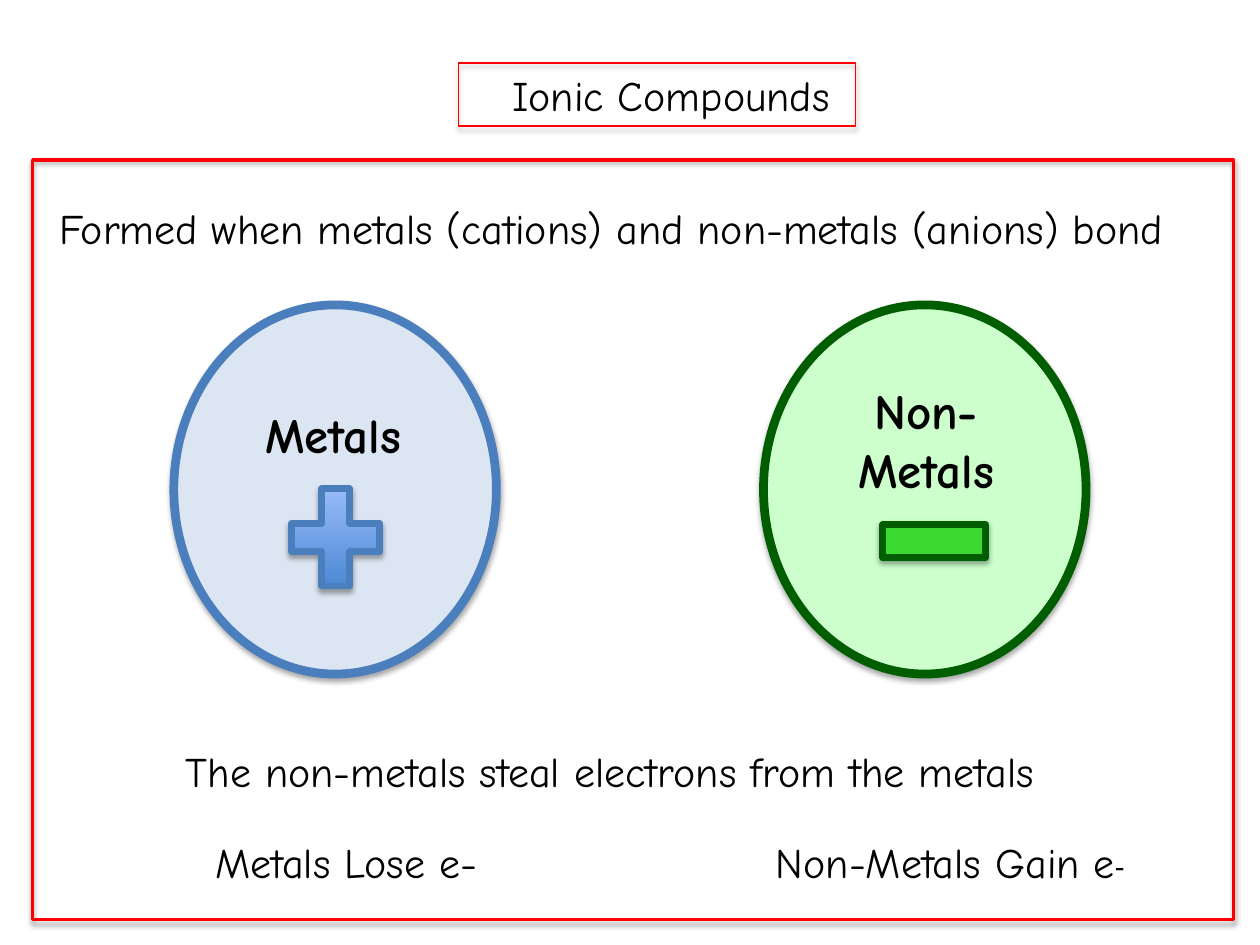
from lxml.etree import SubElement
from pptx import Presentation
from pptx.dml.color import RGBColor
from pptx.enum.shapes import MSO_SHAPE
from pptx.enum.text import MSO_ANCHOR, MSO_AUTO_SIZE, PP_ALIGN
from pptx.oxml.ns import qn
from pptx.util import Inches, Pt

FONT = "Comic Neue"
COLORS = {
    "text": "000000", "frame": "FF0000", "shadow": "000000",
    "metal": "DCE6F2", "metal_line": "4B7EBC",
    "plus_bottom": "3F80CE", "plus_top": "A4C4FF",
    "nonmetal": "CCFFCC", "nonmetal_line": "005D00", "minus": "3AD831",
}

# Content: boxes are left, top, width, height in inches
TITLE = ("Ionic Compounds", (2.99, 0.5, 4.67, 0.5))
FRAMES = [((3.64, 0.5, 3.15, 0.5), 0.75), ((0.26, 1.27, 9.53, 6.03), 2)]
STATEMENTS = [
    (" Formed when metals (cations) and non-metals (anions) bond",
     (0.26, 1.56, 9.74, 0.5), PP_ALIGN.LEFT),
    ("The non-metals steal electrons from the metals ",
     (0.61, 5.87, 8.57, 0.5), PP_ALIGN.CENTER),
    ("Metals Lose e-", (1.61, 6.59, 2.6, 0.5), PP_ALIGN.LEFT),
    ("Non-Metals Gain e", (6.06, 6.59, 3.51, 0.5), PP_ALIGN.LEFT),
]
IONS = [
    {"name": "Metals", "left": 1.38, "label": (1.68, 3.16, 1.93, 0.57),
     "fill": ["metal"], "line": "metal_line",
     "sign": MSO_SHAPE.MATH_PLUS, "sign_box": (2.19, 3.74, 0.95, 1.05),
     "sign_fill": ["plus_bottom", "plus_top"]},
    {"name": "Non-Metals", "left": 6.06, "label": (6.37, 2.97, 1.96, 1.04),
     "fill": ["nonmetal"], "line": "nonmetal_line",
     "sign": MSO_SHAPE.MATH_MINUS, "sign_box": (6.86, 3.74, 1.11, 1.11),
     "sign_fill": ["minus"]},
]


def color(name):
    return RGBColor.from_string(COLORS[name])


def inches(box):
    return [Inches(value) for value in box]


def add_shadow(shape):
    shape.shadow.inherit = False
    effects = shape._element.spPr.find(qn("a:effectLst"))
    shadow = SubElement(effects, qn("a:outerShdw"), blurRad=str(Pt(3.1)),
                        dist=str(Pt(1.8)), dir="5400000", rotWithShape="0")
    tint = SubElement(shadow, qn("a:srgbClr"), val=COLORS["shadow"])
    SubElement(tint, qn("a:alpha"), val="35000")


def add_outlined(kind, box, fills, line, width):
    """Add a shadowed shape with no fill, one fill or a two-stop gradient."""
    shape = slide.shapes.add_shape(kind, *inches(box))
    if not fills:
        shape.fill.background()
    elif len(fills) == 1:
        shape.fill.solid()
        shape.fill.fore_color.rgb = color(fills[0])
    else:
        shape.fill.gradient()
        shape.fill.gradient_angle = 90
        for stop, name, position in zip(shape.fill.gradient_stops, fills, (0, 1)):
            stop.color.rgb = color(name)
            stop.position = position
    shape.line.color.rgb = color(line)
    shape.line.width = Pt(width)
    add_shadow(shape)


def write(shape, text, align, size=24, bold=False):
    frame = shape.text_frame
    frame.text = text
    frame.word_wrap = True
    frame.auto_size = MSO_AUTO_SIZE.NONE
    frame.vertical_anchor = MSO_ANCHOR.TOP
    paragraph = frame.paragraphs[0]
    paragraph.alignment = align
    font = paragraph.font
    font.name, font.size, font.bold = FONT, Pt(size), bold
    font.color.rgb = color("text")
    return paragraph


def add_text(text, box, align, **style):
    return write(slide.shapes.add_textbox(*inches(box)), text, align, **style)


presentation = Presentation()
presentation.slide_width, presentation.slide_height = Inches(10), Inches(7.5)
slide = presentation.slides.add_slide(presentation.slide_layouts[5])

# Title
title = slide.shapes.title
title_text, title_box = TITLE
title.left, title.top, title.width, title.height = inches(title_box)
write(title, title_text, PP_ALIGN.CENTER)

# Red frames around the title and the content
for box, width in FRAMES:
    add_outlined(MSO_SHAPE.RECTANGLE, box, [], "frame", width)

# Ions: circle, name and charge sign
for ion in IONS:
    add_outlined(MSO_SHAPE.OVAL, (ion["left"], 2.42, 2.56, 2.93),
                 ion["fill"], ion["line"], 5)
    add_text(ion["name"], ion["label"], PP_ALIGN.CENTER, size=28, bold=True)
    add_outlined(ion["sign"], ion["sign_box"], ion["sign_fill"], ion["line"], 4)

# Statements; the last one ends with a smaller minus sign
for text, box, align in STATEMENTS:
    paragraph = add_text(text, box, align)
charge = paragraph.add_run()
charge.text = "-"
charge.font.name, charge.font.size = "Calibri", Pt(18)

presentation.save("out.pptx")
